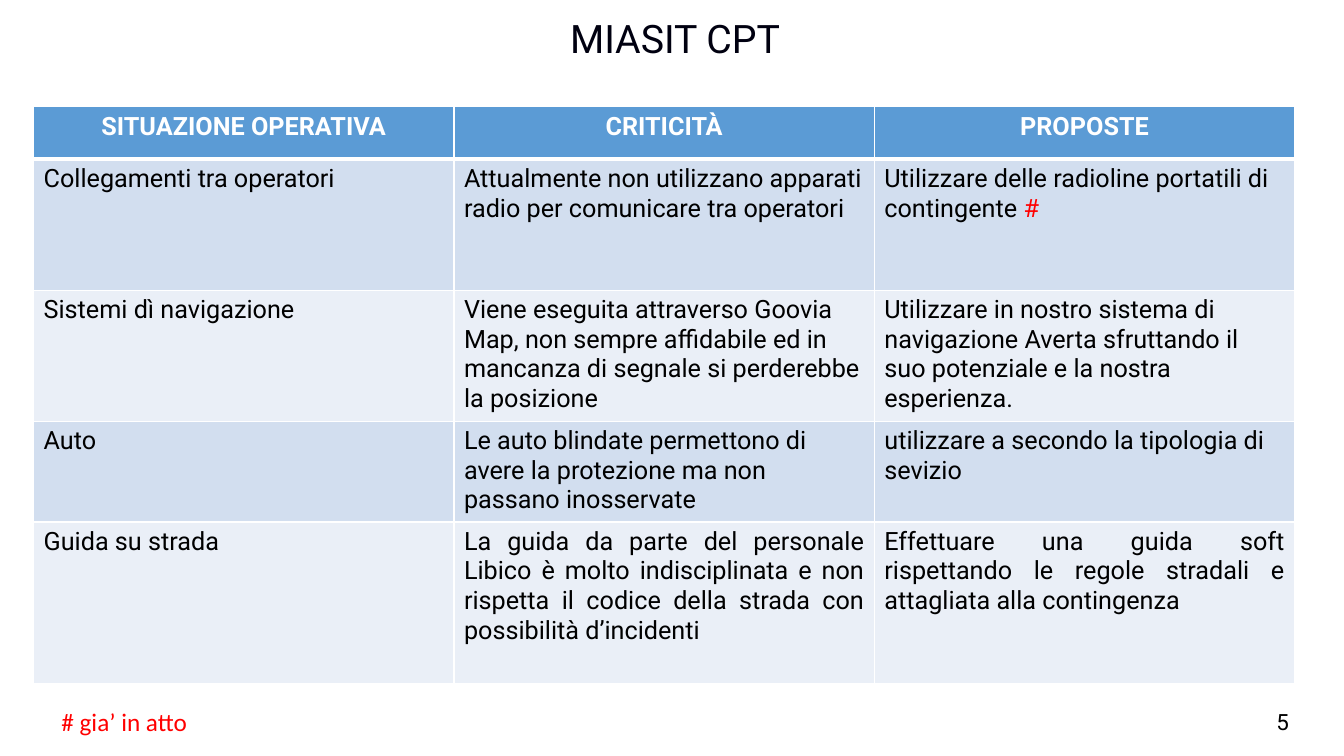
from dataclasses import dataclass

from lxml.etree import SubElement
from pptx import Presentation
from pptx.dml.color import RGBColor
from pptx.enum.text import PP_ALIGN
from pptx.oxml.ns import qn
from pptx.util import Emu, Inches, Pt


@dataclass(frozen=True)
class Theme:
    text_font: str = "Roboto"
    note_font: str = "Calibri"
    title_size: int = 28
    body_size: int = 18
    page_size: int = 16
    title: str = "000010"
    text: str = "000000"
    accent: str = "FF0000"
    white: str = "FFFFFF"
    header: str = "5B9BD5"
    bands: tuple[str, str] = ("D2DEEF", "EAEFF7")
    border: float = 1
    header_border: float = 3


@dataclass(frozen=True)
class Box:
    """Left, top, width and height as percentages of the slide."""
    left: float
    top: float
    width: float
    height: float


@dataclass(frozen=True)
class Style:
    size: int
    color: str
    font: str = "Roboto"
    bold: bool = False
    align: PP_ALIGN = PP_ALIGN.LEFT


@dataclass(frozen=True)
class Label:
    text: str
    box: Box
    style: Style
    wrap: bool = True
    line_spacing: float = 1.0


@dataclass(frozen=True)
class Row:
    height: float
    texts: tuple[str, str, str]
    justified: bool = False


THEME = Theme()
MARK = "#"
TABLE_BOX = Box(2.5, 14.13, 93.84, 76.25)
HEADER = Row(6.93, ("SITUAZIONE OPERATIVA", "CRITICITÀ", "PROPOSTE"))
ROWS = (
    Row(17.33, (
        "Collegamenti tra operatori",
        "Attualmente non utilizzano apparati radio per comunicare tra operatori",
        "Utilizzare delle radioline portatili di contingente #")),
    Row(17.33, (
        "Sistemi dì navigazione",
        "Viene eseguita attraverso Goovia Map, non sempre affidabile ed in "
        "mancanza di segnale si perderebbe la posizione",
        "Utilizzare in nostro sistema di navigazione Averta sfruttando il suo "
        "potenziale e la nostra esperienza.")),
    Row(13.33, (
        "Auto",
        "Le auto blindate permettono di avere la protezione ma non passano inosservate",
        "utilizzare a secondo la tipologia di sevizio")),
    Row(21.33, (
        "Guida su strada",
        "La guida da parte del personale Libico è molto indisciplinata e non "
        "rispetta il codice della strada con possibilità d’incidenti",
        "Effettuare una guida soft rispettando le regole stradali e attagliata "
        "alla contingenza"), justified=True),
)
LABELS = (
    Label("5", Box(92.5, 93.07, 5.85, 5.33),
          Style(THEME.page_size, THEME.text, align=PP_ALIGN.CENTER)),
    Label("MIASIT CPT", Box(7.05, 2.4, 86.35, 6.4),
          Style(THEME.title_size, THEME.title, align=PP_ALIGN.CENTER), line_spacing=0.8),
    Label("# gia’ in atto", Box(3.83, 92.8, 11.03, 5.33),
          Style(THEME.body_size, THEME.accent, THEME.note_font), wrap=False),
)


def share(percent: float, total: int) -> Emu:
    return Emu(round(percent * total / 100))


def place(box: Box, prs) -> tuple[Emu, Emu, Emu, Emu]:
    w, h = prs.slide_width, prs.slide_height
    return share(box.left, w), share(box.top, h), share(box.width, w), share(box.height, h)


def add_run(p, text: str, style: Style) -> None:
    r = p.add_run()
    r.text = text
    values = {"name": style.font, "size": Pt(style.size), "bold": style.bold}
    for name, value in values.items():
        setattr(r.font, name, value)
    r.font.color.rgb = RGBColor.from_string(style.color)


def add_label(s, prs, label: Label) -> None:
    tf = s.shapes.add_textbox(*place(label.box, prs)).text_frame
    tf.word_wrap = label.wrap
    p = tf.paragraphs[0]
    for name, value in {"alignment": label.style.align,
                        "line_spacing": label.line_spacing}.items():
        setattr(p, name, value)
    add_run(p, label.text, label.style)


def add_borders(cell, bottom: float) -> None:
    tc_pr = cell._tc.get_or_add_tcPr()
    widths = {"lnL": THEME.border, "lnR": THEME.border, "lnT": THEME.border, "lnB": bottom}
    for side, width in widths.items():
        line = SubElement(tc_pr, qn(f"a:{side}"), w=str(Pt(width)))
        SubElement(SubElement(line, qn("a:solidFill")), qn("a:srgbClr"), val=THEME.white)


def fill_cell(cell, text: str, style: Style, fill: str, bottom: float) -> None:
    """Write the text, with a closing mark in the accent colour."""
    add_borders(cell, bottom)
    cell.fill.solid()
    cell.fill.fore_color.rgb = RGBColor.from_string(fill)
    p = cell.text_frame.paragraphs[0]
    p.alignment = style.align
    add_run(p, text.removesuffix(MARK), style)
    if text.endswith(MARK):
        add_run(p, MARK, Style(style.size, THEME.accent))


def add_situation_table(s, prs) -> None:
    rows = (HEADER, *ROWS)
    columns = len(HEADER.texts)
    table = s.shapes.add_table(len(rows), columns, *place(TABLE_BOX, prs)).table
    for column in table.columns:
        column.width = share(TABLE_BOX.width / columns, prs.slide_width)
    for i, row in enumerate(rows):
        table.rows[i].height = share(row.height, prs.slide_height)
        for j, text in enumerate(row.texts):
            if row is HEADER:
                style = Style(THEME.body_size, THEME.white, bold=True, align=PP_ALIGN.CENTER)
                fill, bottom = THEME.header, THEME.header_border
            else:
                align = PP_ALIGN.JUSTIFY if row.justified and j else PP_ALIGN.LEFT
                style = Style(THEME.body_size, THEME.text, align=align)
                fill, bottom = THEME.bands[(i - 1) % 2], THEME.border
            fill_cell(table.cell(i, j), text, style, fill, bottom)


def main() -> None:
    prs = Presentation()
    prs.slide_width, prs.slide_height = Inches(13.33), Inches(7.5)
    s = prs.slides.add_slide(prs.slide_layouts[6])
    add_situation_table(s, prs)
    for label in LABELS:
        add_label(s, prs, label)
    prs.save("out.pptx")


if __name__ == "__main__":
    main()
